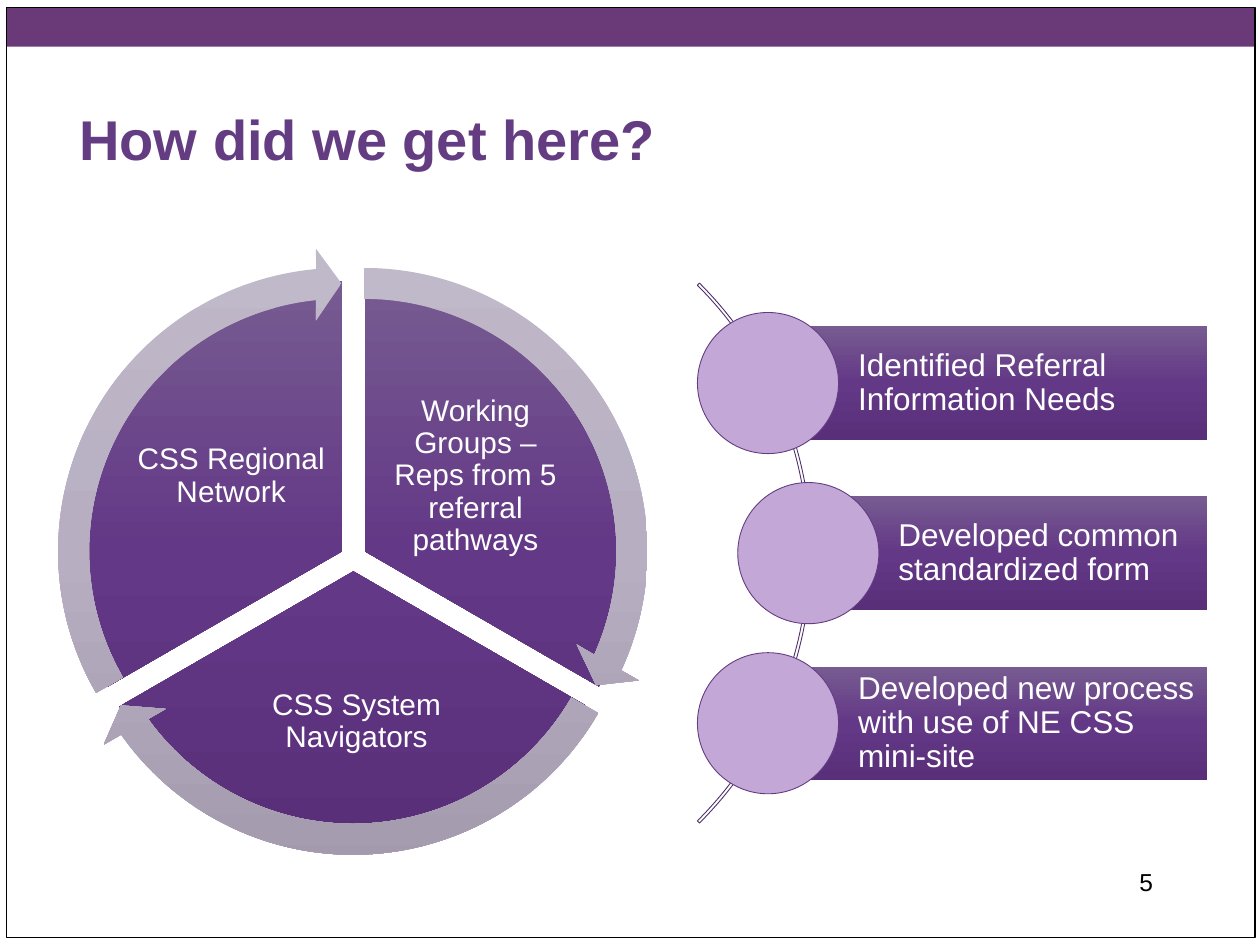
import copy

import pptx
import pptx.dml.color
import pptx.enum.shapes
import pptx.enum.text
import pptx.oxml.ns
import pptx.util

Inches = pptx.util.Inches
Kind = pptx.enum.shapes.MSO_SHAPE
Align = pptx.enum.text.PP_ALIGN
Anchor = pptx.enum.text.MSO_ANCHOR

PURPLE = ["775B91", "633886", "592F7A"]
GREY = ["C0B9C9", "B7AEC2", "A39AAE"]

# Wedge left and top, pie angles, arrow angles, label box, label
WEDGES = [
    (0.75, 2.23, (162, 18), (14.725, 161.994),
     (3.01, 3.14, 1.53, 1.28), "Working Groups – Reps from 5 referral pathways"),
    (0.66, 2.39, (18, 90), (86.72, 18.005),
     (1.68, 5.17, 2.3, 1.12), "CSS System Navigators"),
    (0.57, 2.23, (90, 162), (158.73, 90),
     (1.07, 3.14, 1.53, 1.28), "CSS Regional Network"),
]
# Bar left and text
STEPS = [
    (6.1, "Identified Referral Information Needs"),
    (6.42, "Developed common standardized form"),
    (6.1, "Developed new process with use of NE CSS mini-site"),
]


def color(code):
    return pptx.dml.color.RGBColor.from_string(code)


def shade(shape, codes):
    """Fill top to bottom with evenly spaced colours."""
    fill = shape.fill
    fill.gradient()
    fill.gradient_angle = 270
    stops = shape._element.spPr.find(".//" + pptx.oxml.ns.qn("a:gsLst"))
    while len(stops) < len(codes):
        stops.append(copy.deepcopy(stops[0]))
    for i, (stop, code) in enumerate(zip(fill.gradient_stops, codes)):
        stop.color.rgb = color(code)
        stop.position = i / (len(codes) - 1)


def draw(slide, kind, box, fill=None, line=None, width=0.5, adjust=()):
    shape = slide.shapes.add_shape(kind, *map(Inches, box))
    shape.shadow.inherit = False
    for i, value in enumerate(adjust):
        shape.adjustments[i] = value
    if isinstance(fill, list):
        shade(shape, fill)
    elif fill:
        shape.fill.solid()
        shape.fill.fore_color.rgb = color(fill)
    else:
        shape.fill.background()
    if line:
        shape.line.color.rgb = color(line)
        shape.line.width = pptx.util.Pt(width)
    else:
        shape.line.fill.background()
    return shape


def write(shape, text, size, code, align, anchor, inset, bold=False, space=1):
    frame = shape.text_frame
    frame.text = text
    frame.word_wrap = True
    frame.auto_size = pptx.enum.text.MSO_AUTO_SIZE.NONE
    frame.vertical_anchor = anchor
    (frame.margin_left, frame.margin_top,
     frame.margin_right, frame.margin_bottom) = map(Inches, inset)
    para = frame.paragraphs[0]
    para.alignment = align
    para.line_spacing = space
    font = para.runs[0].font
    font.name = "Arial"
    font.size = pptx.util.Pt(size)
    font.bold = bold
    font.color.rgb = color(code)


def label(slide, box, *args, **more):
    write(slide.shapes.add_textbox(*map(Inches, box)), *args, **more)


def wheel(slide):
    for left, top, angles, _, box, text in WEDGES:
        draw(slide, Kind.PIE, (left, top, 4.29, 4.29), PURPLE, adjust=angles)
        label(slide, box, text, 17, "FFFFFF", Align.CENTER, Anchor.MIDDLE,
              [0.02] * 4, space=0.9)
    # Arrows share their centres with the wedges
    for left, top, _, (end, start), _, _ in WEDGES:
        draw(slide, Kind.CIRCULAR_ARROW,
             (left - 0.27, top - 0.265, 4.82, 4.82), GREY,
             adjust=(0.051, 3.275, end, start, 0.059))


def steps(slide):
    draw(slide, Kind.BLOCK_ARC, (0.38, 1.36, 6.06, 6.06), line="4F3068",
         adjust=(189, 27, 0.004))
    for i, (left, text) in enumerate(STEPS):
        top = 2.59 + 1.35 * i
        bar = draw(slide, Kind.RECTANGLE, (left, top, 9.58 - left, 0.9), PURPLE)
        write(bar, text, 18, "FFFFFF", Align.LEFT, Anchor.MIDDLE,
              (0.71, 0.05, 0.05, 0.05), space=0.9)
        draw(slide, Kind.OVAL, (left - 0.565, top - 0.11, 1.12, 1.12),
             "C2A7D7", "633C82")


def main():
    deck = pptx.Presentation()
    deck.slide_width, deck.slide_height = Inches(10), Inches(7.5)
    slide = deck.slides.add_slide(deck.slide_layouts[5])

    # Top band and page frame
    draw(slide, Kind.RECTANGLE, (0.05, 0.06, 9.91, 0.31), "693A77")
    draw(slide, Kind.RECTANGLE, (0.05, 0.06, 9.91, 7.38), line="000000", width=0.75)

    # Title
    title = slide.shapes.title
    title.left, title.top, title.width, title.height = map(
        Inches, (0.53, 0.41, 8.5, 1))
    write(title, "How did we get here?", 32, "633C82", Align.LEFT,
          Anchor.BOTTOM, (0.1, 0.05, 0.1, 0.05), bold=True)

    wheel(slide)
    steps(slide)

    # Page number
    label(slide, (7.17, 6.83, 2.08, 0.5), "5", 14, "000000", Align.RIGHT,
          Anchor.TOP, (0.1, 0.05, 0.1, 0.05))
    deck.save("out.pptx")


if __name__ == "__main__":
    main()
